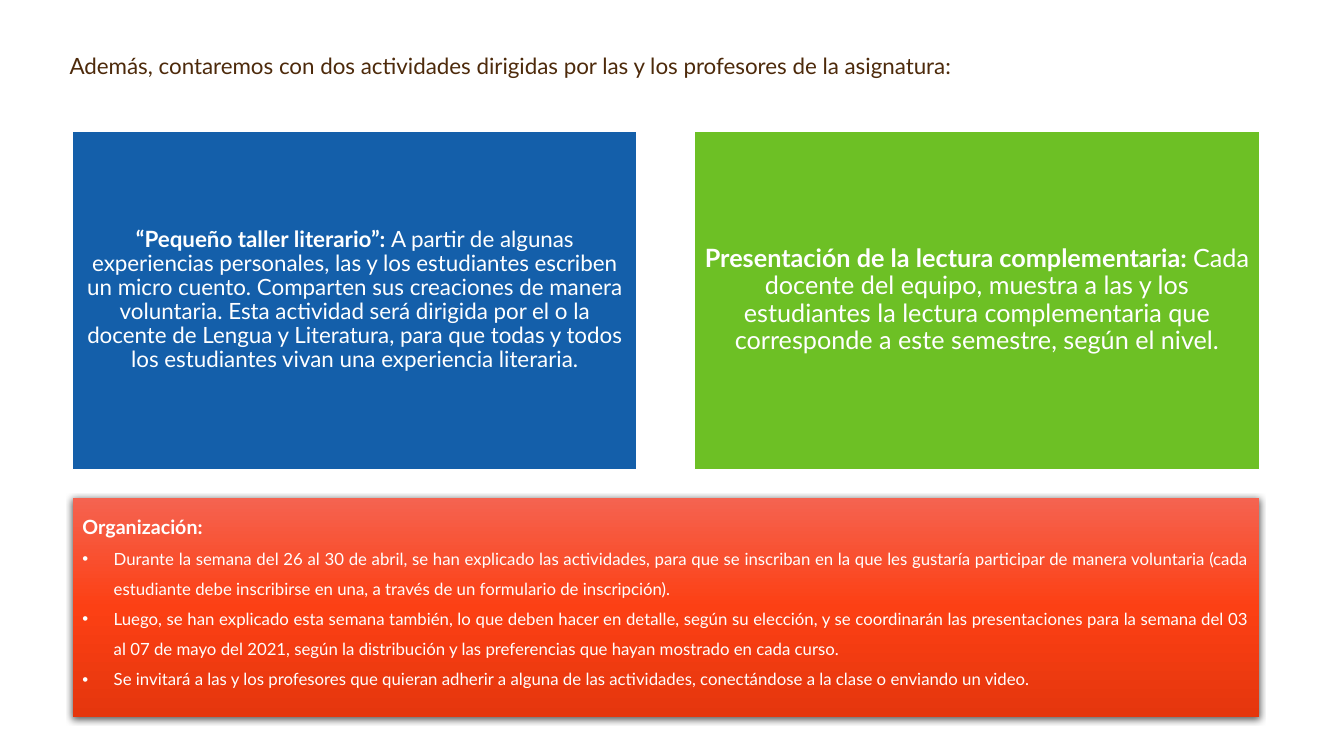
from lxml import etree
from pptx import Presentation
from pptx.dml.color import RGBColor
from pptx.enum.shapes import MSO_SHAPE
from pptx.enum.text import MSO_ANCHOR, PP_ALIGN
from pptx.oxml import parse_xml
from pptx.oxml.ns import nsdecls, qn
from pptx.util import Inches, Pt

FONT = "Lato"
COLORS = {
    "title": "4D2A0B",
    "white": "FFFFFF",
    "workshop": "145FAA",
    "reading": "6DC025",
    "shadow": "000000",
}
ORGANIZATION_STOPS = [(0, "F56350"), (50, "FC4014"), (100, "E5360D")]

TITLE = "Además, contaremos con dos actividades dirigidas por las y los profesores de la asignatura:"
ACTIVITIES = [
    ("workshop", 16, "“Pequeño taller literario”: ",
     "A partir de algunas experiencias personales, las y los estudiantes escriben un micro cuento. "
     "Comparten sus creaciones de manera voluntaria. Esta actividad será dirigida por el o la docente "
     "de Lengua y Literatura, para que todas y todos los estudiantes vivan una experiencia literaria."),
    ("reading", 18, "Presentación de la lectura complementaria: ",
     "Cada docente del equipo, muestra a las y los estudiantes la lectura complementaria que "
     "corresponde a este semestre, según el nivel."),
]
ORGANIZATION = [
    "Durante la semana del 26 al 30 de abril, se han explicado las actividades, para que se inscriban "
    "en la que les gustaría participar de manera voluntaria (cada estudiante debe inscribirse en una, "
    "a través de un formulario de inscripción).",
    "Luego, se han explicado esta semana también, lo que deben hacer en detalle, según su elección, "
    "y se coordinarán las presentaciones para la semana del 03 al 07 de mayo del 2021, según la "
    "distribución y las preferencias que hayan mostrado en cada curso.",
    "Se invitará a las y los profesores que quieran adherir a alguna de las actividades, "
    "conectándose a la clase o enviando un video.",
]


class SlideBuilder:
    def __init__(self, slide):
        self.slide = slide

    def style(self, paragraph, size, color, align, spacing, bold=None):
        paragraph.alignment = align
        paragraph.line_spacing = spacing
        font = paragraph.font
        font.name, font.size, font.bold = FONT, Pt(size), bold
        font.color.rgb = RGBColor.from_string(COLORS[color])

    def box(self, left, top, width, height):
        box = self.slide.shapes.add_shape(
            MSO_SHAPE.RECTANGLE, Inches(left), Inches(top), Inches(width), Inches(height))
        box.shadow.inherit = False
        box.text_frame.word_wrap = True
        return box

    def title(self, text, left, top, width, height):
        title = self.slide.shapes.title
        title.left, title.top = Inches(left), Inches(top)
        title.width, title.height = Inches(width), Inches(height)
        title.text_frame.text = text
        title.text_frame.vertical_anchor = MSO_ANCHOR.BOTTOM
        self.style(title.text_frame.paragraphs[0], 16, "title", PP_ALIGN.JUSTIFY, 0.9)

    def activity(self, fill, size, name, description, *place):
        card = self.box(*place)
        card.fill.solid()
        card.fill.fore_color.rgb = RGBColor.from_string(COLORS[fill])
        card.line.color.rgb = RGBColor.from_string(COLORS["white"])
        card.line.width = Pt(1)
        frame = card.text_frame
        frame.vertical_anchor = MSO_ANCHOR.MIDDLE
        frame.margin_left = frame.margin_right = Inches(0.07)
        frame.margin_top = frame.margin_bottom = Inches(0.07)
        paragraph = frame.paragraphs[0]
        for text, bold in ((name, True), (description, False)):
            run = paragraph.add_run()
            run.text, run.font.bold = text, bold
        self.style(paragraph, size, "white", PP_ALIGN.CENTER, 0.9)

    def organization(self, heading, items, *place):
        panel = self.box(*place)
        panel.line.fill.background()
        self.gradient(panel, ORGANIZATION_STOPS)
        self.drop_shadow(panel)
        frame = panel.text_frame
        frame.vertical_anchor = MSO_ANCHOR.TOP
        frame.text = heading
        self.style(frame.paragraphs[0], 14, "white", PP_ALIGN.JUSTIFY, 1.5, bold=True)
        for item in items:
            paragraph = frame.add_paragraph()
            paragraph.text = item
            self.bullet(paragraph)
            self.style(paragraph, 12, "white", PP_ALIGN.JUSTIFY, 1.5)

    def bullet(self, paragraph):
        properties = paragraph._p.get_or_add_pPr()
        properties.set("marL", str(Inches(0.31)))
        properties.set("indent", str(-Inches(0.31)))
        etree.SubElement(properties, qn("a:buFont")).set("typeface", "Arial")
        etree.SubElement(properties, qn("a:buChar")).set("char", "•")

    def gradient(self, shape, stops):
        marks = "".join(
            f'<a:gs pos="{position * 1000}"><a:srgbClr val="{color}"/></a:gs>'
            for position, color in stops)
        shape._element.spPr.find(qn("a:prstGeom")).addnext(parse_xml(
            f'<a:gradFill {nsdecls("a")} rotWithShape="1"><a:gsLst>{marks}</a:gsLst>'
            '<a:lin ang="5400000" scaled="0"/></a:gradFill>'))

    def drop_shadow(self, shape):
        shape._element.spPr.find(qn("a:effectLst")).append(parse_xml(
            f'<a:outerShdw {nsdecls("a")} blurRad="{Pt(4.5)}" dist="{Pt(1.5)}" dir="5400000" '
            f'algn="ctr" rotWithShape="0"><a:srgbClr val="{COLORS["shadow"]}">'
            '<a:alpha val="63000"/></a:srgbClr></a:outerShdw>'))


def main():
    presentation = Presentation()
    presentation.slide_width, presentation.slide_height = Inches(13.33), Inches(7.5)
    builder = SlideBuilder(presentation.slides.add_slide(presentation.slide_layouts[5]))

    # Introduction
    builder.title(TITLE, 0.59, 0.19, 12.56, 0.65)

    # Two activities side by side
    left, width, gap = 0.72, 5.6, 0.57
    for column, activity in enumerate(ACTIVITIES):
        builder.activity(*activity, left + column * (width + gap), 1.3, width, 3.36)

    # Organization panel, as wide as both activities
    builder.organization("Organización:", ORGANIZATION, left, 4.94, 2 * width + gap, 2.17)

    presentation.save("out.pptx")


if __name__ == "__main__":
    main()
